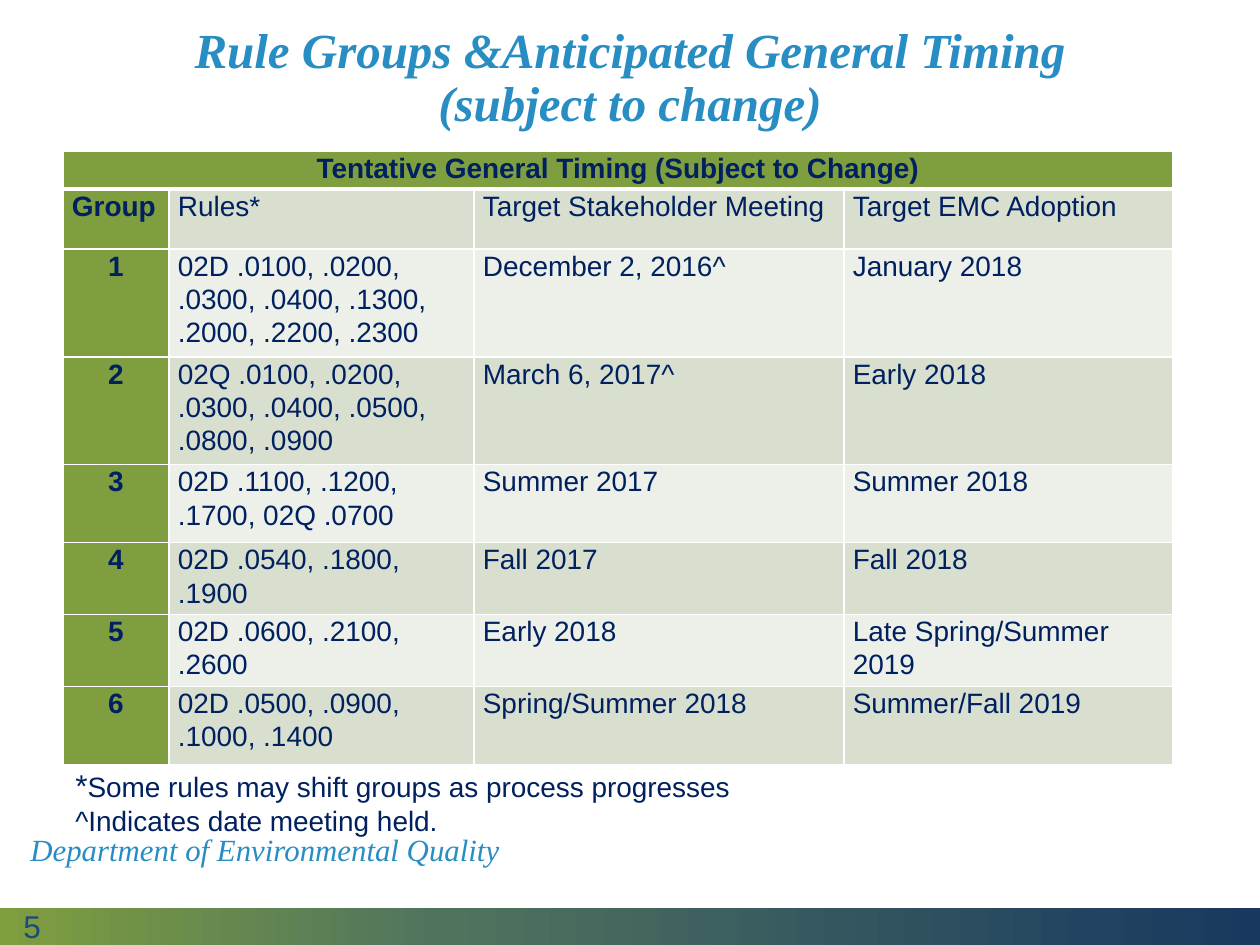
"""Build the slide on rule groups and their anticipated timing."""
import pptx
import pptx.util
import pptx.dml.color
import pptx.enum.shapes
import pptx.enum.text
import pptx.oxml
import pptx.oxml.ns
import copy

RGBColor = pptx.dml.color.RGBColor
ALIGN = pptx.enum.text.PP_ALIGN
ANCHOR = pptx.enum.text.MSO_ANCHOR
GREEN = RGBColor(0x7F, 0x9E, 0x3F)
TEAL = RGBColor(0x4F, 0x74, 0x5E)
DARK_BLUE = RGBColor(0x18, 0x38, 0x60)
TITLE_BLUE = RGBColor(0x28, 0x8D, 0xC2)
NUMBER_BLUE = RGBColor(0x1F, 0x49, 0x7D)
NAVY = RGBColor(0x00, 0x20, 0x60)
BAND_DARK = RGBColor(0xD8, 0xDF, 0xCF)
BAND_LIGHT = RGBColor(0xEC, 0xF0, 0xE8)
WHITE = RGBColor(0xFF, 0xFF, 0xFF)
SERIF = "Times New Roman"


def px(*lengths):
    return [pptx.util.Emu(round(length * 914400 / 126)) for length in lengths]


def write(paragraph, text, size=16, font="Arial", color=NAVY, bold=False,
          italic=False, align=None, spacing=None):
    paragraph.alignment = align
    paragraph.line_spacing = spacing
    for index, line in enumerate(text.split("\n")):
        if index:
            paragraph.add_line_break()
        run = paragraph.add_run()
        run.text = line
        run.font.size = pptx.util.Pt(size)
        run.font.name = font
        run.font.color.rgb = color
        run.font.bold = bold
        run.font.italic = italic


deck = pptx.Presentation()
deck.slide_width, deck.slide_height = px(1260, 945)
slide = deck.slides.add_slide(deck.slide_layouts[5])
slide.background.fill.solid()
slide.background.fill.fore_color.rgb = WHITE

footer_bar = slide.shapes.add_shape(
    pptx.enum.shapes.MSO_SHAPE.RECTANGLE, *px(0, 908, 1260, 37))
footer_bar.shadow.inherit = False
footer_bar.line.fill.background()
footer_bar.fill.gradient()
footer_bar.fill.gradient_angle = 0
first_stop = footer_bar.fill._fill._gradFill.gsLst[0]
first_stop.addnext(copy.deepcopy(first_stop))
for stop, color, position in zip(footer_bar.fill.gradient_stops,
                                 (GREEN, TEAL, DARK_BLUE), (0, 0.35, 1)):
    stop.color.rgb = color
    stop.position = position

title = slide.shapes.title
title.left, title.top, title.width, title.height = px(87, 6, 1086, 146)
title.text_frame.vertical_anchor = ANCHOR.MIDDLE
write(title.text_frame.paragraphs[0],
      "Rule Groups &Anticipated General Timing\n(subject to change)",
      size=28, font=SERIF, color=TITLE_BLUE, bold=True, italic=True,
      align=ALIGN.CENTER, spacing=0.9)

page_number = slide.shapes.add_textbox(*px(11, 916, 284, 19)).text_frame
department = slide.shapes.add_textbox(*px(18, 827, 517, 50)).text_frame
for frame in (page_number, department):
    frame.word_wrap = True
    frame.vertical_anchor = ANCHOR.MIDDLE
write(page_number.paragraphs[0], "5", size=18, color=NUMBER_BLUE)
write(department.paragraphs[0], "Department of Environmental Quality",
      size=17.6, font=SERIF, color=TITLE_BLUE, italic=True, spacing=0.9)

schedule = [
    ("Tentative General Timing (Subject to Change)", "", "", ""),
    ("Group", "Rules*", "Target Stakeholder Meeting", "Target EMC Adoption"),
    ("1", "02D .0100, .0200, .0300, .0400, .1300, .2000, .2200, .2300",
     "December 2, 2016^", "January 2018"),
    ("2", "02Q .0100, .0200, .0300, .0400, .0500, .0800, .0900",
     "March 6, 2017^", "Early 2018"),
    ("3", "02D .1100, .1200, .1700, 02Q .0700", "Summer 2017", "Summer 2018"),
    ("4", "02D .0540, .1800, .1900", "Fall 2017", "Fall 2018"),
    ("5", "02D .0600, .2100, .2600", "Early 2018", "Late Spring/Summer 2019"),
    ("6", "02D .0500, .0900, .1000, .1400", "Spring/Summer 2018",
     "Summer/Fall 2019"),
]
timing = slide.shapes.add_table(8, 4, *px(63, 151, 1110, 595)).table
timing.first_col = True
timing.horz_banding = False
for column, width in zip(timing.columns, px(106, 305, 370, 329)):
    column.width = width
for row, height in zip(timing.rows, px(38, 60, 107, 100, 78, 67, 67, 78)):
    row.height = height
timing.cell(0, 0).merge(timing.cell(0, 3))

for r, entries in enumerate(schedule):
    for c, entry in enumerate(entries):
        cell = timing.cell(r, c)
        cell.margin_left, cell.margin_right = px(9, 9)
        cell.margin_top = cell.margin_bottom = 0
        for side in "LRTB":
            thick = (r, side) in ((0, "B"), (1, "T"))
            cell._tc.get_or_add_tcPr().append(pptx.oxml.parse_xml(
                f'<a:ln{side} {pptx.oxml.ns.nsdecls("a")} '
                f'w="{pptx.util.Pt(3 if thick else 1)}"><a:solidFill>'
                f'<a:srgbClr val="{WHITE}"/></a:solidFill></a:ln{side}>'))
        heading = r == 0 or c == 0
        cell.fill.solid()
        cell.fill.fore_color.rgb = (
            GREEN if heading else BAND_DARK if r % 2 else BAND_LIGHT)
        if entry:
            write(cell.text_frame.paragraphs[0], entry, bold=heading,
                  align=ALIGN.CENTER if heading and r != 1 else ALIGN.LEFT,
                  spacing=1.07)

footnotes = slide.shapes.add_textbox(*px(63, 760, 920, 127)).text_frame
footnotes.word_wrap = True
footnotes.auto_size = pptx.enum.text.MSO_AUTO_SIZE.SHAPE_TO_FIT_TEXT
write(footnotes.paragraphs[0], "*", size=18)
write(footnotes.paragraphs[0],
      "Some rules may shift groups as process progresses")
write(footnotes.add_paragraph(), "^Indicates date meeting held.")

deck.save("out.pptx")
